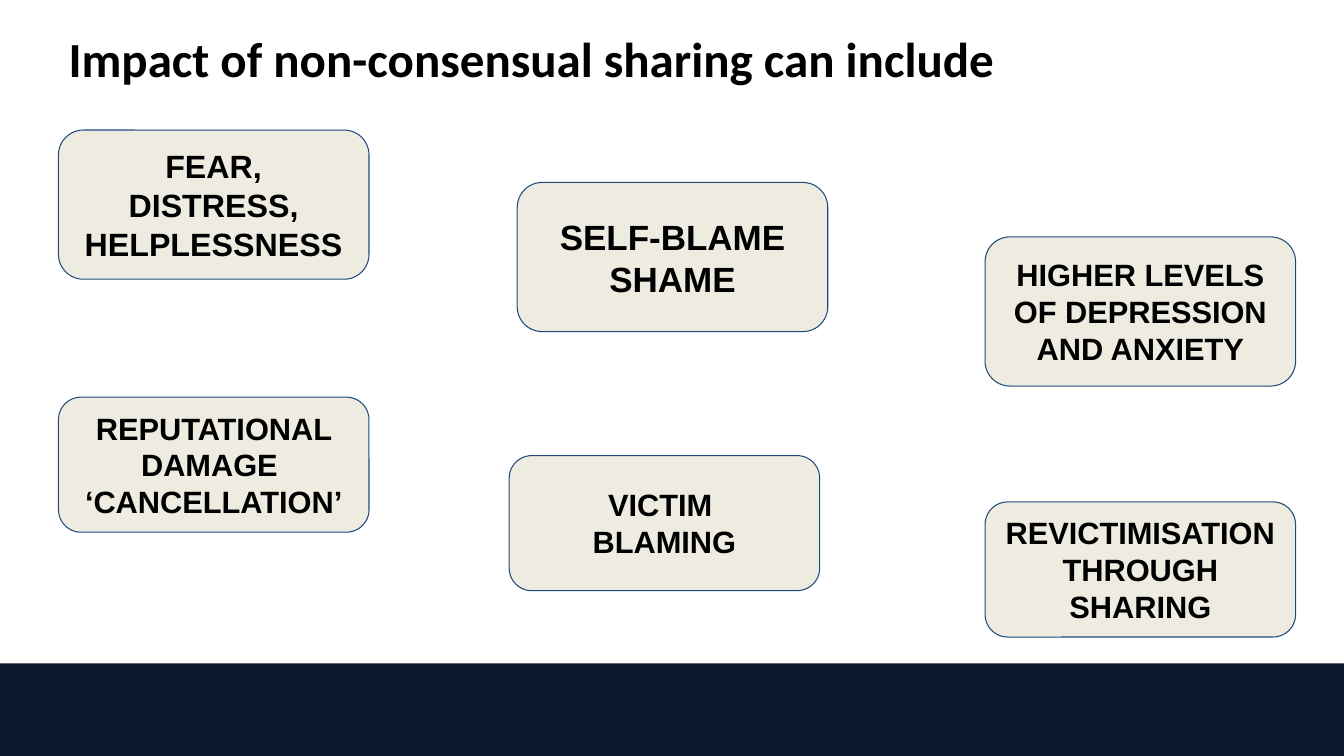
import pptx
import pptx.util
import pptx.dml.color
import pptx.enum.shapes
import pptx.enum.text

SCALE = 9144
SHAPES = pptx.enum.shapes.MSO_SHAPE
ALIGN = pptx.enum.text.PP_ALIGN
ANCHOR = pptx.enum.text.MSO_ANCHOR

WIDE = 308
TALL, SHORT = 148, 134
CARDS = [
    (58, 129, TALL, 23, "FEAR, DISTRESS, HELPLESSNESS"),
    (513, 181, TALL, 25, "SELF-BLAME\nSHAME"),
    (977, 235, TALL, 22, "HIGHER LEVELS OF DEPRESSION AND ANXIETY"),
    (58, 394, SHORT, 22, "REPUTATIONAL DAMAGE \n‘CANCELLATION’"),
    (505, 452, SHORT, 22, "VICTIM \nBLAMING"),
    (977, 498, SHORT, 22, "REVICTIMISATION\nTHROUGH SHARING"),
]


def px(count):
    return pptx.util.Emu(count * SCALE)


def tint(code):
    return pptx.dml.color.RGBColor.from_string(code)


def write(shape, text, size, face, align, anchor, inset):
    frame = shape.text_frame
    frame.text = text
    frame.word_wrap = True
    frame.auto_size = pptx.enum.text.MSO_AUTO_SIZE.NONE
    frame.vertical_anchor = anchor
    frame.margin_left = frame.margin_right = px(inset)
    frame.margin_top = frame.margin_bottom = px(10)
    for line in frame.paragraphs:
        line.alignment = align
        for run in line.runs:
            run.font.size = pptx.util.Pt(size)
            run.font.name = face
            run.font.bold = True
            run.font.color.rgb = tint("000000")


def block(slide, kind, left, top, width, height, fill):
    shape = slide.shapes.add_shape(kind, px(left), px(top), px(width), px(height))
    shape.shadow.inherit = False
    shape.fill.solid()
    shape.fill.fore_color.rgb = tint(fill)
    shape.line.fill.background()
    return shape


def card(slide, left, top, height, size, text):
    shape = block(slide, SHAPES.ROUNDED_RECTANGLE, left, top, WIDE, height, "EEECE1")
    shape.adjustments[0] = 0.167
    shape.line.color.rgb = tint("1F497D")
    shape.line.width = pptx.util.Pt(0.75)
    write(shape, text, size, "Arial", ALIGN.CENTER, ANCHOR.MIDDLE, 11)


def head(slide, text):
    title = slide.shapes.title
    title.left, title.top = px(58), px(18)
    title.width, title.height = px(1003), px(103)
    write(title, text, 35, "Calibri", ALIGN.LEFT, ANCHOR.TOP, 10)


def main():
    deck = pptx.Presentation()
    deck.slide_width, deck.slide_height = px(1333), px(750)
    slide = deck.slides.add_slide(deck.slide_layouts[5])
    block(slide, SHAPES.RECTANGLE, 0, 658, 1333, 92, "0B1830")
    head(slide, "Impact of non-consensual sharing can include")
    for item in CARDS:
        card(slide, *item)
    deck.save("out.pptx")


if __name__ == "__main__":
    main()
